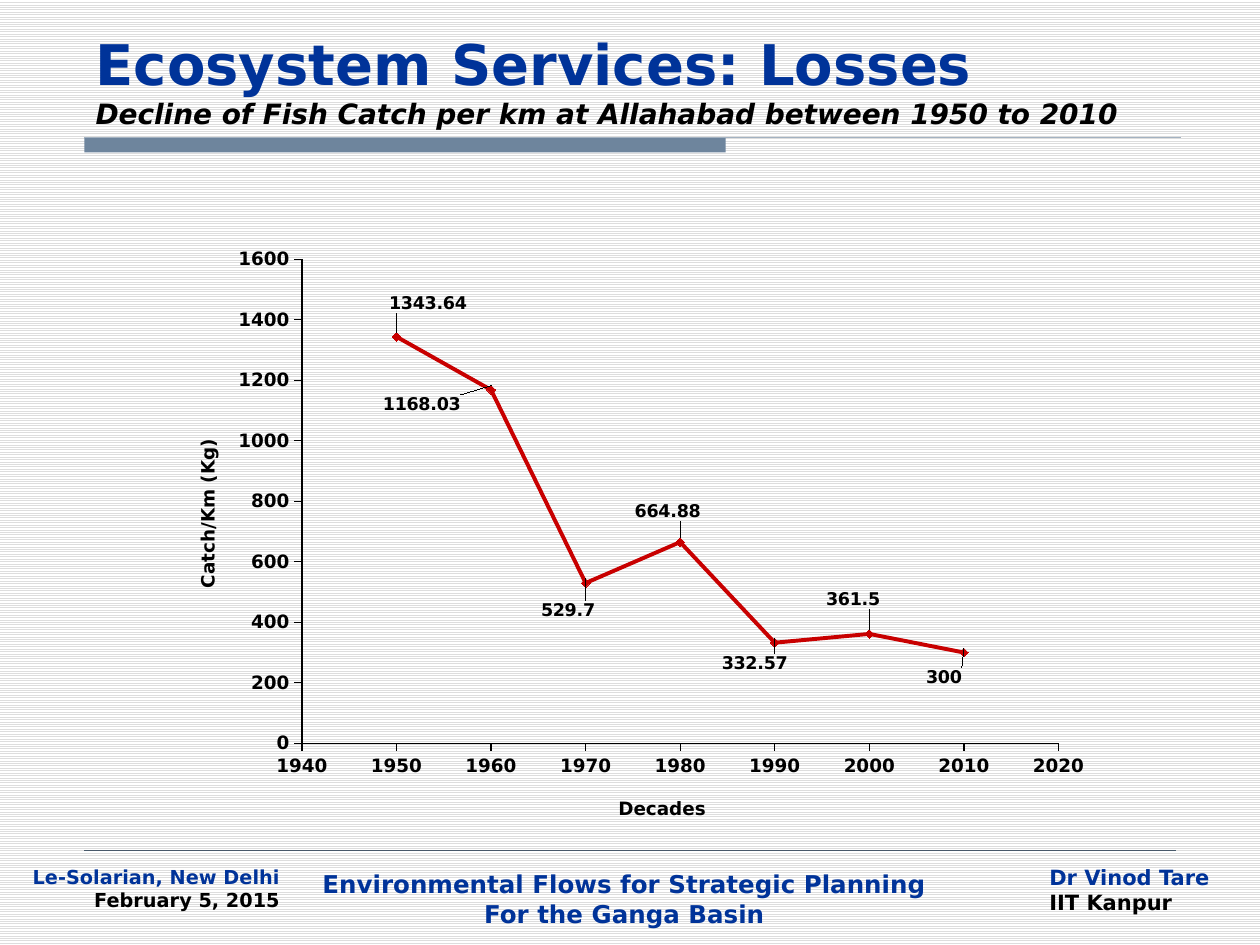
from lxml import etree
from pptx import Presentation
from pptx.chart.data import XyChartData
from pptx.dml.color import RGBColor
from pptx.enum.chart import XL_CHART_TYPE, XL_LABEL_POSITION, XL_MARKER_STYLE, XL_TICK_MARK
from pptx.enum.dml import MSO_PATTERN
from pptx.enum.shapes import MSO_CONNECTOR, MSO_SHAPE
from pptx.enum.text import MSO_ANCHOR, PP_ALIGN
from pptx.oxml.ns import qn
from pptx.util import Inches, Pt

SMOOTH = XL_CHART_TYPE.XY_SCATTER_SMOOTH
ABOVE = XL_LABEL_POSITION.ABOVE
DIAMOND = XL_MARKER_STYLE.DIAMOND
OUTSIDE = XL_TICK_MARK.OUTSIDE
STRIPES = MSO_PATTERN.LIGHT_HORIZONTAL
STRAIGHT = MSO_CONNECTOR.STRAIGHT
RECTANGLE = MSO_SHAPE.RECTANGLE
BOTTOM, TOP = MSO_ANCHOR.BOTTOM, MSO_ANCHOR.TOP
LEFT, CENTER, RIGHT = PP_ALIGN.LEFT, PP_ALIGN.CENTER, PP_ALIGN.RIGHT

FONT = "DejaVu Sans"
COLORS = {
    "blue": "003399", "black": "000000", "white": "FFFFFF", "stripe": "DDDDDD",
    "bar": "6E859D", "rule": "A3B2C1", "footer_rule": "48596A", "curve": "C80000",
}
CHART_W, CHART_H = 7.46, 4.81
LABEL_RISE = 0.13
CATCH = [
    (1950, 1343.64, 0.25, -0.24),
    (1960, 1168.03, -0.55, 0.14),
    (1970, 529.7, -0.14, 0.24),
    (1980, 664.88, -0.10, -0.22),
    (1990, 332.57, -0.16, 0.19),
    (2000, 361.5, -0.13, -0.25),
    (2010, 300, -0.16, 0.22),
]


def rgb(name):
    return RGBColor.from_string(COLORS[name])


def style_font(font, size, color="black", italic=None):
    font.name = FONT
    font.size = Pt(size)
    font.bold = True
    font.italic = italic
    font.color.rgb = rgb(color)


def add_text(s, box, lines, align=LEFT, anchor=TOP, wrap=True):
    tf = s.shapes.add_textbox(*map(Inches, box)).text_frame
    tf.word_wrap = wrap
    tf.vertical_anchor = anchor
    tf.text = "\n".join(line[0] for line in lines)
    for p, (_, *style) in zip(tf.paragraphs, lines):
        p.alignment = align
        style_font(p.runs[0].font, *style)


def add_rule(s, x1, x2, y, color, width):
    line = s.shapes.add_connector(STRAIGHT, *map(Inches, (x1, y, x2, y)))
    line.line.color.rgb = rgb(color)
    line.line.width = Pt(width)
    etree.SubElement(line._element.spPr, qn("a:effectLst"))


def add_bar(s, box, color):
    sp = s.shapes.add_shape(RECTANGLE, *map(Inches, box))
    sp.shadow.inherit = False
    sp.fill.solid()
    sp.fill.fore_color.rgb = rgb(color)
    sp.line.fill.background()


def make_layout(**values):
    layout = etree.Element(qn("c:layout"))
    manual = etree.SubElement(layout, qn("c:manualLayout"))
    for tag, value in values.items():
        etree.SubElement(manual, qn("c:" + tag)).set("val", str(value))
    return layout


def replace_layout(parent, layout, index):
    for old in parent.findall(qn("c:layout")):
        parent.remove(old)
    parent.insert(index, layout)


def format_axis(axis, title, x, y, low, high, step):
    axis.minimum_scale, axis.maximum_scale, axis.major_unit = low, high, step
    axis.has_major_gridlines = False
    axis.major_tick_mark = OUTSIDE
    axis.format.line.color.rgb = rgb("black")
    axis.format.line.width = Pt(0.75)
    style_font(axis.tick_labels.font, 10.5)
    axis.tick_labels.number_format = "General"
    axis.tick_labels.number_format_is_linked = False
    tf = axis.axis_title.text_frame
    tf.text = title
    style_font(tf.paragraphs[0].runs[0].font, 10.5)
    layout = make_layout(xMode="edge", yMode="edge", x=x, y=y)
    replace_layout(axis.axis_title._element, layout, 1)


def format_series(series):
    series.smooth = True
    series.format.line.color.rgb = rgb("curve")
    series.format.line.width = Pt(2.25)
    series.marker.style = DIAMOND
    series.marker.size = 5
    series.marker.format.fill.solid()
    series.marker.format.fill.fore_color.rgb = rgb("curve")
    series.marker.format.line.color.rgb = rgb("curve")
    for i, (_, _, dx, dy) in enumerate(CATCH):
        label = series.points[i].data_label
        style_font(label.font, 10)
        label.position = ABOVE
        element = series._element.find(qn("c:dLbls")).findall(qn("c:dLbl"))[i]
        layout = make_layout(x=round(dx / CHART_W, 4),
                             y=round((dy + LABEL_RISE) / CHART_H, 4))
        replace_layout(element, layout, 1)


def add_catch_chart(s):
    data = XyChartData()
    points = data.add_series("Series 1")
    for year, catch, _, _ in CATCH:
        points.add_data_point(year, catch)
    box = map(Inches, (1.3, 1.87, CHART_W, CHART_H))
    chart = s.shapes.add_chart(SMOOTH, *box, data).chart
    style_font(chart.font, 10)
    chart.has_legend = False
    chart.has_title = False
    chart.plots[0].vary_by_categories = False
    format_axis(chart.category_axis, "Decades", 0.48, 0.92, 1940, 2020, 10)
    format_axis(chart.value_axis, "Catch/Km (Kg)", 0.03, 0.33, 0, 1600, 200)
    format_series(chart.plots[0].series[0])
    layout = make_layout(layoutTarget="inner", xMode="edge", yMode="edge",
                         x=0.147, y=0.039, w=0.805, h=0.799)
    replace_layout(chart._chartSpace.chart.plotArea, layout, 0)


def main():
    prs = Presentation()
    prs.slide_width, prs.slide_height = Inches(10), Inches(7.5)
    s = prs.slides.add_slide(prs.slide_layouts[6])
    fill = s.background.fill
    fill.patterned()
    fill.pattern = STRIPES
    fill.fore_color.rgb = rgb("stripe")
    fill.back_color.rgb = rgb("white")

    add_bar(s, (0.67, 1.09, 5.09, 0.12), "bar")
    add_rule(s, 0.67, 9.37, 1.09, "rule", 0.75)
    add_rule(s, 0.67, 9.33, 6.75, "footer_rule", 0.25)
    add_text(s, (0, 6.82, 2.32, 0.47),
             [("Le-Solarian, New Delhi", 11, "blue"),
              ("February 5, 2015", 11, "black")], align=RIGHT)
    add_text(s, (8.23, 6.81, 1.5, 0.5),
             [("Dr Vinod Tare", 12, "blue"), ("IIT Kanpur", 12, "black")], wrap=False)
    add_text(s, (2.29, 6.85, 5.33, 0.57),
             [("Environmental Flows for Strategic Planning", 14, "blue"),
              ("For the Ganga Basin", 14, "blue")], align=CENTER)
    add_text(s, (0.66, 0.46, 8.75, 0.62),
             [("Ecosystem Services: Losses", 32, "blue"),
              ("Decline of Fish Catch per km at Allahabad between 1950 to 2010",
               16, "black", True)], anchor=BOTTOM)
    add_catch_chart(s)
    prs.save("out.pptx")


if __name__ == "__main__":
    main()
